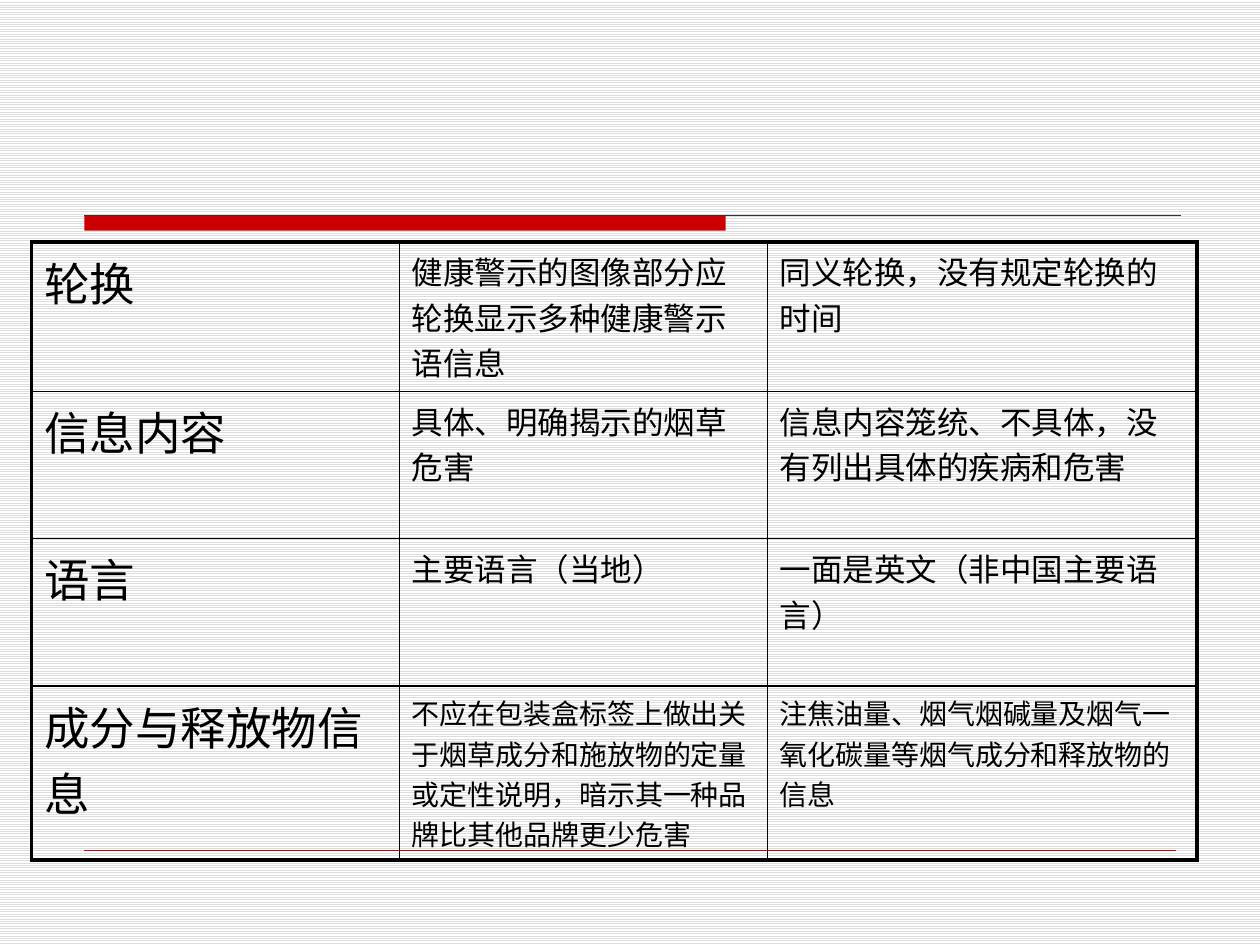
from lxml.etree import SubElement
from pptx import Presentation
from pptx.dml.color import RGBColor
from pptx.enum.dml import MSO_PATTERN
from pptx.enum.shapes import MSO_CONNECTOR, MSO_SHAPE
from pptx.oxml.ns import qn
from pptx.util import Inches, Pt

BLACK = RGBColor(0, 0, 0)
RED = RGBColor(0xCC, 0, 0)
DARK = RGBColor(0x33, 0x33, 0x33)
WHITE = RGBColor(0xFF, 0xFF, 0xFF)
STRIPE = RGBColor(0xDD, 0xDD, 0xDD)

# topic, recommended practice, current practice, size of the two practice texts
COMPARISON = [
    ("轮换", "健康警示的图像部分应轮换显示多种健康警示语信息",
     "同义轮换，没有规定轮换的时间", 18),
    ("信息内容", "具体、明确揭示的烟草危害",
     "信息内容笼统、不具体，没有列出具体的疾病和危害", 18),
    ("语言", "主要语言（当地）", "一面是英文（非中国主要语言）", 18),
    ("成分与释放物信息",
     "不应在包装盒标签上做出关于烟草成分和施放物的定量或定性说明，暗示其一种品牌比其他品牌更少危害",
     "注焦油量、烟气烟碱量及烟气一氧化碳量等烟气成分和释放物的信息", 16),
]
TOPIC_SIZE = 26
COLUMN_WIDTHS = (2.92, 2.92, 3.41)
ROW_HEIGHT = 1.17
OUTER, INNER = 2.25, 1
# left, right, y, colour, width
RULES = [(0.67, 9.37, 1.71, DARK, 0.75), (0.67, 9.33, 6.75, RED, 0.25)]


def add_rule(slide, left, right, y, color, width):
    rule = slide.shapes.add_connector(
        MSO_CONNECTOR.STRAIGHT, Inches(left), Inches(y), Inches(right), Inches(y))
    rule.line.color.rgb = color
    rule.line.width = Pt(width)
    SubElement(rule._element.spPr, qn("a:effectLst"))


def set_borders(cell, widths):
    properties = cell._tc.get_or_add_tcPr()
    for side, width in widths.items():
        border = SubElement(properties, qn(f"a:ln{side}"), w=str(Pt(width)))
        fill = SubElement(border, qn("a:solidFill"))
        SubElement(fill, qn("a:srgbClr"), val=str(BLACK))


def write_cell(cell, text, size, font_name):
    cell.text = text
    paragraph = cell.text_frame.paragraphs[0]
    spacing = SubElement(paragraph._p.get_or_add_pPr(), qn("a:spcBef"))
    SubElement(spacing, qn("a:spcPct"), val="20000")
    font = paragraph.runs[0].font
    for name, value in {"size": Pt(size), "name": font_name}.items():
        setattr(font, name, value)
    font.color.rgb = BLACK


def add_comparison(slide):
    last_row, last_column = len(COMPARISON) - 1, len(COLUMN_WIDTHS) - 1
    table = slide.shapes.add_table(
        last_row + 1, last_column + 1, Inches(0.25), Inches(1.92),
        Inches(sum(COLUMN_WIDTHS)), Inches(ROW_HEIGHT * len(COMPARISON))).table
    table.first_row = table.horz_banding = False
    for column, width in zip(table.columns, COLUMN_WIDTHS):
        column.width = Inches(width)
    for r, (*texts, practice_size) in enumerate(COMPARISON):
        table.rows[r].height = Inches(ROW_HEIGHT)
        for c, text in enumerate(texts):
            cell = table.cell(r, c)
            if c == 0:
                write_cell(cell, text, TOPIC_SIZE, "DejaVu Sans")
            else:
                write_cell(cell, text, practice_size, "Times New Roman")
            on_edge = {"L": c == 0, "R": c == last_column,
                       "T": r == 0, "B": r == last_row}
            set_borders(cell, {side: OUTER if edge else INNER
                               for side, edge in on_edge.items()})
            cell.fill.background()


def main():
    deck = Presentation()
    deck.slide_width, deck.slide_height = Inches(10), Inches(7.5)
    slide = deck.slides.add_slide(deck.slide_layouts[6])
    background = slide.background.fill
    background.patterned()
    background.pattern = MSO_PATTERN.LIGHT_HORIZONTAL
    background.fore_color.rgb = STRIPE
    background.back_color.rgb = WHITE

    bar = slide.shapes.add_shape(
        MSO_SHAPE.RECTANGLE, Inches(0.67), Inches(1.71), Inches(5.09), Inches(0.12))
    bar.shadow.inherit = False
    bar.fill.solid()
    bar.fill.fore_color.rgb = RED
    bar.line.fill.background()
    for rule in RULES:
        add_rule(slide, *rule)
    add_comparison(slide)
    deck.save("out.pptx")


if __name__ == "__main__":
    main()
